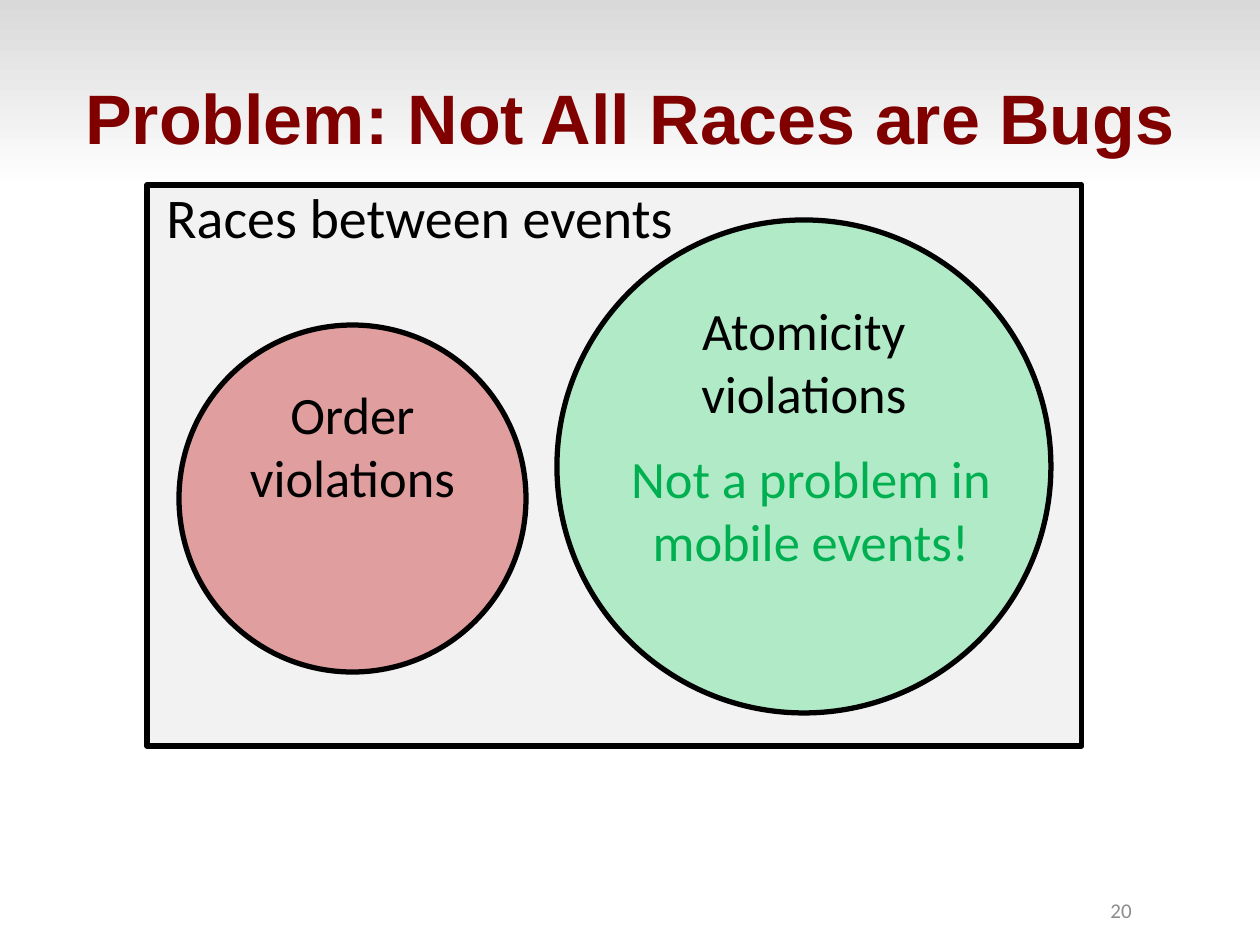
from pptx import Presentation
from pptx.dml.color import RGBColor
from pptx.enum.shapes import MSO_SHAPE
from pptx.enum.text import MSO_ANCHOR, PP_ALIGN
from pptx.util import Pt

EMU_PER_PX = 914400 / 126
COLORS = {
    "title": "800000",
    "ink": "000000",
    "muted": "8C8C8C",
    "panel": "F2F2F2",
    "order": "E19E9E",
    "atomicity": "B0EAC7",
    "remark": "00B050",
    "paper": "FFFFFF",
    "top_shade": "D9D9D9",
}


def px(length):
    """Turn pixels into EMU."""
    return round(length * EMU_PER_PX)


def color(name):
    """Look up a named colour."""
    return RGBColor.from_string(COLORS[name])


def write(shape, text, size=30, font="Calibri", ink="ink", bold=False,
          align=PP_ALIGN.CENTER, anchor=MSO_ANCHOR.TOP):
    """Put one formatted paragraph into a shape."""
    frame = shape.text_frame
    frame.word_wrap = True
    frame.vertical_anchor = anchor
    para = frame.paragraphs[0]
    para.alignment = align
    span = para.add_run()
    span.text = text
    span.font.size = Pt(size)
    span.font.name = font
    span.font.bold = bold
    span.font.color.rgb = color(ink)


def add_background(page):
    """Shade the page from grey at the top to white."""
    fill = page.background.fill
    fill.gradient()
    fill.gradient_angle = 90
    for stop, position, name in zip(fill.gradient_stops, (0.8, 1), ("paper", "top_shade")):
        stop.position = position
        stop.color.rgb = color(name)


def add_title(page, text, left, top, width, height):
    """Place and fill the title placeholder."""
    title = page.shapes.title
    title.left, title.top = px(left), px(top)
    title.width, title.height = px(width), px(height)
    write(title, text, size=40, font="Arial", ink="title", bold=True,
          anchor=MSO_ANCHOR.MIDDLE)


def add_region(page, kind, fill, left, top, width, height):
    """Draw one outlined set of the diagram."""
    region = page.shapes.add_shape(kind, px(left), px(top), px(width), px(height))
    region.shadow.inherit = False
    region.fill.solid()
    region.fill.fore_color.rgb = color(fill)
    region.line.color.rgb = color("ink")
    region.line.width = Pt(3)
    return region


def add_label(page, text, left, top, width, height, **style):
    """Add a text box with one formatted paragraph."""
    box = page.shapes.add_textbox(px(left), px(top), px(width), px(height))
    write(box, text, **style)


def main():
    """Build and save the slide."""
    deck = Presentation()
    deck.slide_width, deck.slide_height = px(1260), px(945)
    page = deck.slides.add_slide(deck.slide_layouts.get_by_name("Title Only"))
    add_background(page)
    add_title(page, "Problem: Not All Races are Bugs", 63, 38, 1134, 157)
    add_label(page, "20", 924, 885, 220, 50, size=12, ink="muted",
              align=PP_ALIGN.RIGHT, anchor=MSO_ANCHOR.MIDDLE)

    add_region(page, MSO_SHAPE.RECTANGLE, "panel", 147, 185, 935, 561)
    add_label(page, "Races between events", 154, 176, 588, 126, size=32,
              align=PP_ALIGN.LEFT)
    order = add_region(page, MSO_SHAPE.OVAL, "order", 179, 325, 347, 347)
    write(order, "Order violations")
    atomicity = add_region(page, MSO_SHAPE.OVAL, "atomicity", 557, 220, 494, 493)
    write(atomicity, "Atomicity violations")
    add_label(page, "Not a problem in mobile events!", 588, 388, 446, 242,
              ink="remark", anchor=MSO_ANCHOR.MIDDLE)
    deck.save("out.pptx")


if __name__ == "__main__":
    main()
